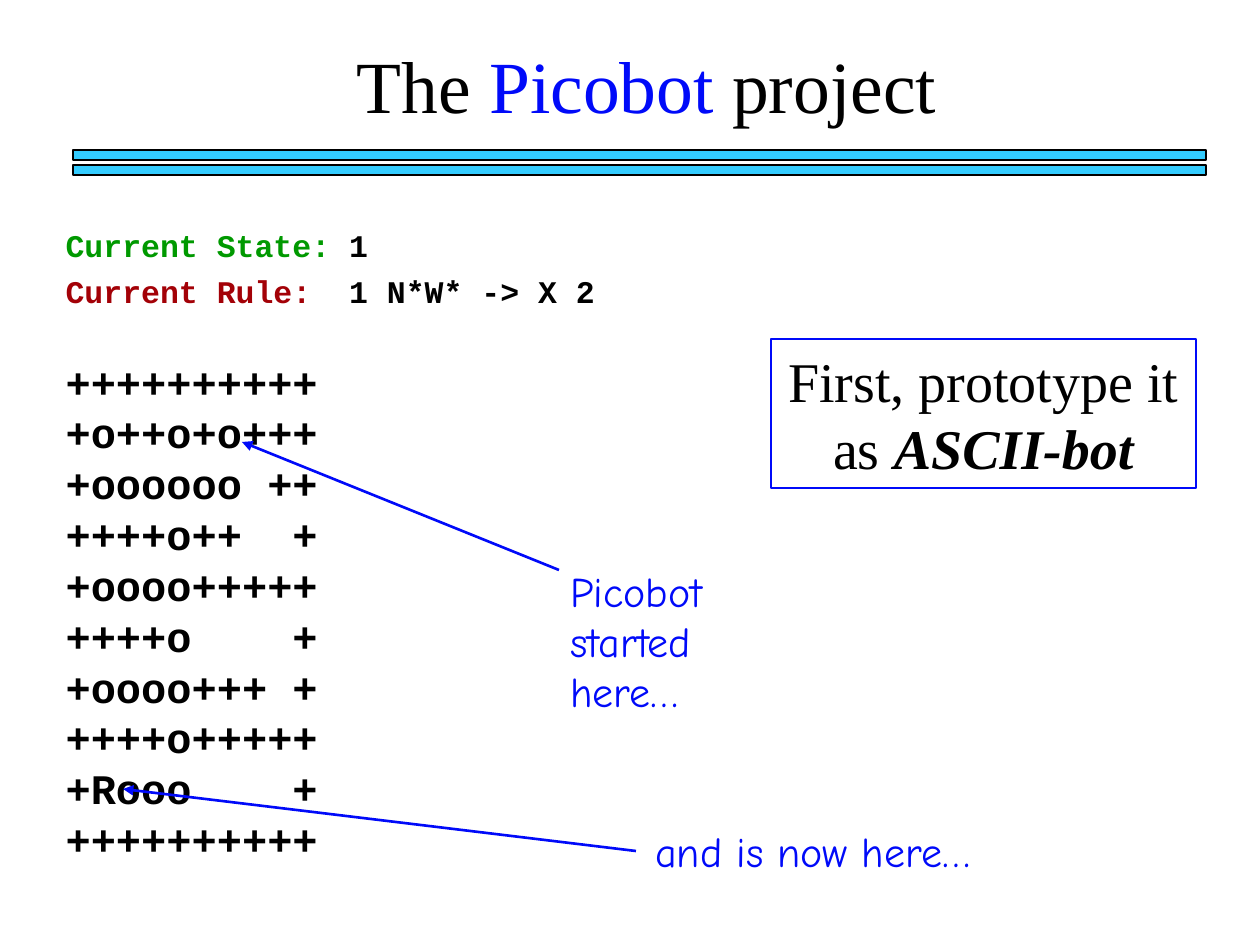
import dataclasses

import pptx
import pptx.dml.color
import pptx.enum.shapes
import pptx.enum.text
import pptx.oxml
import pptx.oxml.ns
import pptx.util
from lxml import etree

EMU_PER_PX = 914400 / 126


@dataclasses.dataclass(frozen=True)
class Theme:
    black: str = "000000"
    blue: str = "000AF9"
    cyan: str = "33CCFF"
    green: str = "009900"
    red: str = "A30107"
    serif: str = "Times New Roman"
    mono: str = "Courier New"
    hand: str = "Comic Neue"
    title: int = 42
    callout: int = 32
    large: int = 24
    small: int = 18


def px(*lengths):
    return [pptx.util.Emu(round(length * EMU_PER_PX)) for length in lengths]


def rgb(color):
    return pptx.dml.color.RGBColor.from_string(color)


class SlideBuilder:
    def __init__(self, deck, theme):
        self.theme = theme
        self.page = deck.slides.add_slide(deck.slide_layouts[1])

    def place(self, shape, bounds):
        shape.left, shape.top, shape.width, shape.height = px(*bounds)

    def style(self, para, face, size, color, bold=False):
        para.font.name = face
        para.font.size = pptx.util.Pt(size)
        para.font.color.rgb = rgb(color)
        para.font.bold = bold

    def add_spans(self, para, spans):
        """Add (text, color) spans; a color of None keeps the paragraph's."""
        for text, color in spans:
            span = para.add_run()
            span.text = text
            if color:
                span.font.color.rgb = rgb(color)

    def title(self, bounds, spans):
        box = self.page.shapes.title
        self.place(box, bounds)
        frame = box.text_frame
        frame.word_wrap = False
        frame.auto_size = pptx.enum.text.MSO_AUTO_SIZE.NONE
        frame.vertical_anchor = pptx.enum.text.MSO_ANCHOR.TOP
        para = frame.paragraphs[0]
        para.alignment = pptx.enum.text.PP_ALIGN.LEFT
        para.space_before = pptx.util.Pt(4)
        self.style(para, self.theme.serif, self.theme.title, self.theme.black)
        self.add_spans(para, spans)

    def body(self, bounds):
        box = self.page.placeholders[1]
        self.place(box, bounds)
        box.text_frame.auto_size = pptx.enum.text.MSO_AUTO_SIZE.NONE
        return box.text_frame

    def code_line(self, frame, spans, size, before, spacing=1.0):
        para = frame.paragraphs[0]
        if para.runs:
            para = frame.add_paragraph()
        para.space_before = pptx.util.Pt(before)
        para.line_spacing = spacing
        self.style(para, self.theme.mono, size, self.theme.black, bold=True)
        self.add_spans(para, spans)
        properties = para._p.get_or_add_pPr()
        properties.set("marL", "0")
        properties.set("indent", "0")
        properties.insert_element_before(
            pptx.oxml.parse_xml(f'<a:buNone {pptx.oxml.ns.nsdecls("a")}/>'),
            "a:tabLst", "a:defRPr", "a:extLst")

    def rectangle(self, bounds, line, fill=None, parent=None):
        shapes = (parent or self.page).shapes
        box = shapes.add_shape(pptx.enum.shapes.MSO_SHAPE.RECTANGLE, *px(*bounds))
        box.shadow.inherit = False
        if fill:
            box.fill.solid()
            box.fill.fore_color.rgb = rgb(fill)
        else:
            box.fill.background()
        box.line.color.rgb = rgb(line)
        box.line.width = pptx.util.Pt(0.75)
        return box

    def callout(self, bounds, text, emphasis):
        box = self.rectangle(bounds, self.theme.blue)
        box.text_frame.word_wrap = True
        para = box.text_frame.paragraphs[0]
        para.alignment = pptx.enum.text.PP_ALIGN.CENTER
        self.style(para, self.theme.serif, self.theme.callout, self.theme.black)
        self.add_spans(para, [(text, None), (emphasis, None)])
        para.runs[-1].font.bold = True
        para.runs[-1].font.italic = True

    def note(self, bounds, text):
        box = self.page.shapes.add_textbox(*px(*bounds))
        box.text_frame.word_wrap = True
        para = box.text_frame.paragraphs[0]
        self.style(para, self.theme.hand, self.theme.large, self.theme.blue)
        self.add_spans(para, [(text, None)])

    def arrow(self, start, end):
        line = self.page.shapes.add_connector(
            pptx.enum.shapes.MSO_CONNECTOR.STRAIGHT, *px(*start, *end))
        line.line.color.rgb = rgb(self.theme.blue)
        line.line.width = pptx.util.Pt(1.5)
        properties = line._element.spPr
        outline = properties.find(pptx.oxml.ns.qn("a:ln"))
        etree.SubElement(outline, pptx.oxml.ns.qn("a:tailEnd"), type="triangle")
        etree.SubElement(properties, pptx.oxml.ns.qn("a:effectLst"))


def main():
    deck = pptx.Presentation()
    deck.slide_width, deck.slide_height = px(1260, 945)
    theme = Theme()
    slide = SlideBuilder(deck, theme)

    # Title above a double rule
    slide.title((344, 34, 605, 101),
                [("The ", None), ("Picobot", theme.blue), (" project", None)])
    double_rule = slide.page.shapes.add_group_shape()
    for top in (150, 165):
        slide.rectangle((73, top, 1133, 10), theme.black, theme.cyan, double_rule)

    # Robot status
    body = slide.body((53, 220, 1134, 655))
    slide.code_line(body, [("Current State:", theme.green), (" 1", None)],
                    theme.small, before=4.5)
    slide.code_line(body, [("Current Rule:", theme.red), ("  1 N*W* -> X 2", None)],
                    theme.small, before=4.5)

    # Robot map, set apart from the status
    robot_map = [
        "++++++++++",
        "+o++o+o+++",
        "+oooooo ++",
        "++++o++  +",
        "+oooo+++++",
        "++++o    +",
        "+oooo+++ +",
        "++++o+++++",
        "+Rooo    +",
        "++++++++++",
    ]
    for index, row in enumerate(robot_map):
        slide.code_line(body, [(row, None)], theme.large,
                        before=6 if index else 32, spacing=0.8)

    # Boxed first step
    slide.callout((771, 339, 425, 149), "First, prototype it as ", "ASCII-bot")

    # Arrows and notes for the robot's path
    slide.arrow((636, 851), (123, 789))
    slide.arrow((559, 570), (242, 442))
    slide.note((558, 559, 256, 164), "Picobot started here…")
    slide.note((643, 819, 378, 63), "and is now here…")

    deck.save("out.pptx")


if __name__ == "__main__":
    main()
